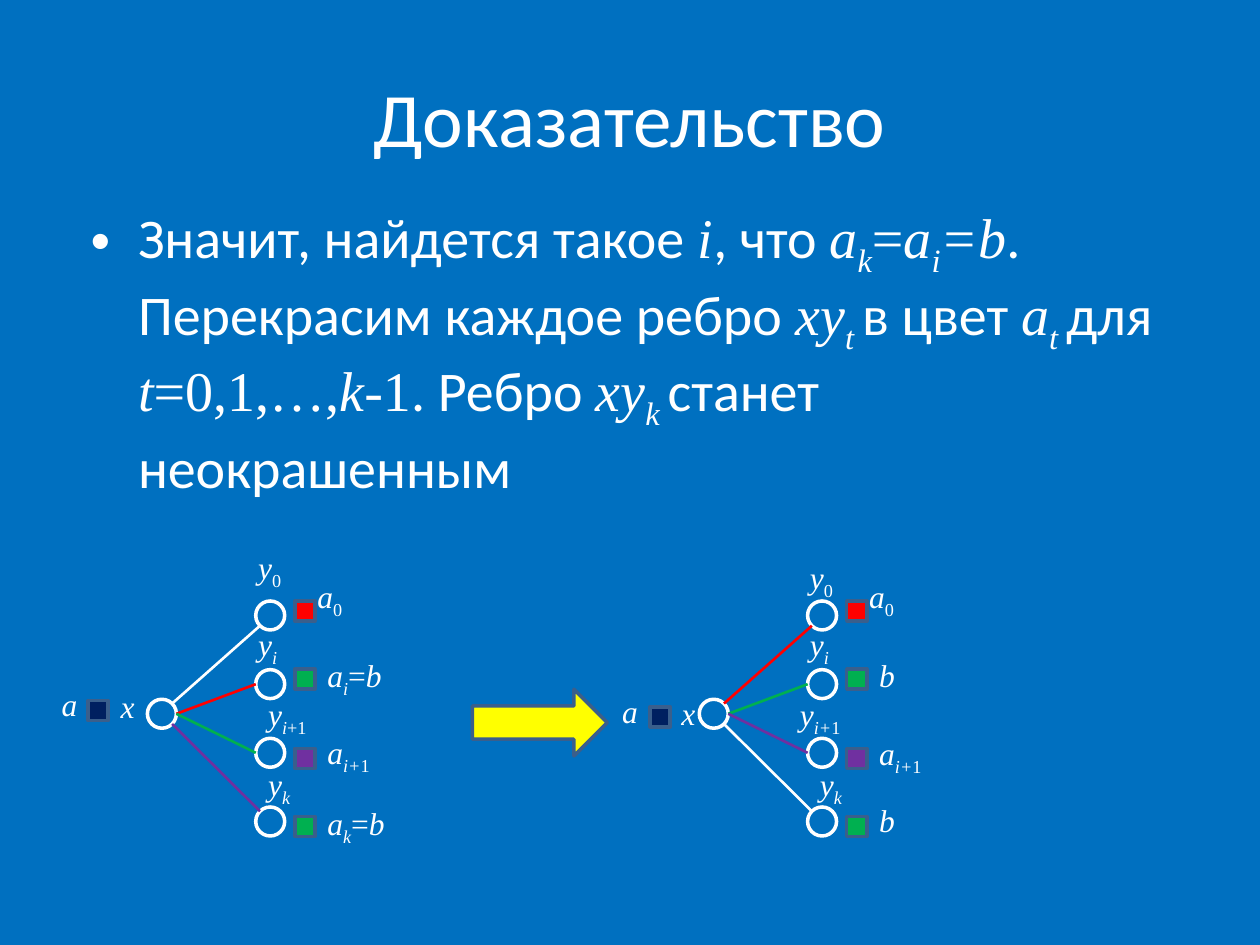
import math

import pptx
import pptx.dml.color
import pptx.enum.shapes
import pptx.enum.text
import pptx.oxml
import pptx.util

BLUE, WHITE, OUTLINE = "0070C0", "FFFFFF", "3A5F8C"
RED, GREEN, PURPLE, NAVY, YELLOW = "FF0000", "00B050", "7030A0", "002060", "FFFF00"
PLAIN, MATH = "Calibri", "Times New Roman"
SHAPE = pptx.enum.shapes.MSO_SHAPE

# Run styles: font, italic, subscript
STYLES = {
    "text": (PLAIN, False, False),
    "var": (MATH, True, False),
    "num": (MATH, False, False),
    "sub": (MATH, True, True),
    "subnum": (MATH, False, True),
}

TITLE = "Доказательство"
STATEMENT = [
    ("Значит, найдется такое ", "text"), ("i", "var"), (", что ", "text"),
    ("a", "var"), ("k", "sub"), ("=", "num"), ("a", "var"), ("i", "sub"), ("=b", "var"),
    (". Перекрасим каждое ребро ", "text"), ("xy", "var"), ("t ", "sub"),
    ("в цвет ", "text"), ("a", "var"), ("t ", "sub"), ("для ", "text"),
    ("t", "var"), ("=0,1,…,", "num"), ("k", "var"), ("-1", "num"),
    (". Ребро ", "text"), ("xy", "var"), ("k ", "sub"), ("станет неокрашенным", "text"),
]

A, B, X, Y = [(letter, "var") for letter in "abxy"]
SUB_0, SUB_I, SUB_K = ("0", "subnum"), ("i", "sub"), ("k", "sub")
NEXT = [("i+", "sub"), ("1", "subnum")]
EQUALS_B = [("=", "num"), B]

# Labels are (runs, left, top, width); lefts are measured from the graph's origin.
GRAPHS = [
    {
        "origin": 0,
        "edges": [WHITE, RED, GREEN, PURPLE],
        "hub_swatch": (0.7, 5.56),
        "labels": [
            ([A], 0.39, 5.39, 0.47), ([X], 0.86, 5.4, 0.28),
            ([Y, SUB_0], 1.95, 4.3, 0.47), ([Y, SUB_I], 1.95, 4.91, 0.47),
            ([Y, SUB_I, ("+1", "subnum")], 2.03, 5.47, 0.63),
            ([Y, SUB_K], 2.03, 6.02, 0.47),
            ([A, SUB_0], 2.42, 4.53, 0.47), ([A, SUB_I, *EQUALS_B], 2.5, 5.16, 0.7),
            ([A, *NEXT], 2.5, 5.77, 0.63), ([A, SUB_K, *EQUALS_B], 2.5, 6.33, 0.7),
        ],
    },
    {
        "origin": 4.38,
        "edges": [RED, GREEN, PURPLE, WHITE],
        "hub_swatch": (0.78, 5.61),
        "labels": [
            ([A], 0.46, 5.44, 0.47), ([X], 0.93, 5.46, 0.28),
            ([Y, SUB_0], 1.95, 4.38, 0.47), ([Y, SUB_I], 1.95, 4.91, 0.47),
            ([Y, *NEXT], 1.87, 5.47, 0.63), ([Y, SUB_K], 2.03, 6.02, 0.47),
            ([A, SUB_0], 2.42, 4.53, 0.47), ([B], 2.5, 5.16, 0.47),
            ([A, *NEXT], 2.5, 5.78, 0.63), ([B], 2.5, 6.31, 0.47),
        ],
    },
]
NODE, SWATCH = 0.23, 0.16
HUB_LEFT, HUB_TOP = 1.17, 5.55
LEAF_LEFT, LEAF_TOP, LEAF_STEP = 2.03, 4.77, 0.545
SWATCH_LEFT = 2.34
SWATCHES = [(4.77, RED), (5.31, GREEN), (5.94, PURPLE), (6.48, GREEN)]
# Angle, clockwise from the right, at which each edge leaves the hub
EDGE_ANGLES = [-45, 0, 0, 45]


def color(hex_code):
    return pptx.dml.color.RGBColor.from_string(hex_code)


def inches(*lengths):
    return [pptx.util.Inches(length) for length in lengths]


def write(paragraph, runs, size):
    paragraph.font.size = pptx.util.Pt(size)
    paragraph.font.color.rgb = color(WHITE)
    for text, style in runs:
        run = paragraph.add_run()
        run.text = text
        run.font.size = pptx.util.Pt(size)
        run.font.color.rgb = color(WHITE)
        run.font.name, run.font.italic, lowered = STYLES[style]
        if lowered:
            run.font._element.set("baseline", "-25000")


def add_figure(slide, preset, box, fill, outline):
    figure = slide.shapes.add_shape(preset, *inches(*box))
    figure.shadow.inherit = False
    figure.fill.solid()
    figure.fill.fore_color.rgb = color(fill)
    figure.line.color.rgb = color(outline)
    figure.line.width = pptx.util.Pt(2)


def add_swatch(slide, left, top, fill):
    add_figure(slide, SHAPE.RECTANGLE, (left, top, SWATCH, SWATCH), fill, OUTLINE)


def add_edge(slide, start, end, stroke):
    edge = slide.shapes.add_connector(
        pptx.enum.shapes.MSO_CONNECTOR.STRAIGHT, *inches(*start, *end))
    edge.line.color.rgb = color(stroke)
    edge.line.width = pptx.util.Pt(1.5)
    edge._element.spPr.append(pptx.oxml.parse_xml(
        '<a:effectLst xmlns:a="http://schemas.openxmlformats.org/drawingml/2006/main"/>'))


def rim(left, top, degrees):
    """Point on the rim of the node whose box starts at left, top."""
    radius, angle = NODE / 2, math.radians(degrees)
    return (left + radius * (1 + math.cos(angle)), top + radius * (1 + math.sin(angle)))


def add_label(slide, runs, left, top, width):
    label = slide.shapes.add_textbox(*inches(left, top, width, 0.4))
    label.text_frame.word_wrap = True
    write(label.text_frame.paragraphs[0], runs, 18)


def add_graph(slide, graph):
    origin = graph["origin"]
    hub = (origin + HUB_LEFT, HUB_TOP)
    leaves = [(origin + LEAF_LEFT, LEAF_TOP + row * LEAF_STEP) for row in range(4)]
    for node in [hub, *leaves]:
        add_figure(slide, SHAPE.OVAL, (*node, NODE, NODE), BLUE, WHITE)
    for leaf, angle, stroke in zip(leaves, EDGE_ANGLES, graph["edges"]):
        add_edge(slide, rim(*hub, angle), rim(*leaf, angle + 180), stroke)
    for top, fill in SWATCHES:
        add_swatch(slide, origin + SWATCH_LEFT, top, fill)
    swatch_left, swatch_top = graph["hub_swatch"]
    add_swatch(slide, origin + swatch_left, swatch_top, NAVY)
    for runs, left, top, width in graph["labels"]:
        add_label(slide, runs, origin + left, top, width)


def place(placeholder, *box):
    placeholder.left, placeholder.top, placeholder.width, placeholder.height = inches(*box)


def main():
    deck = pptx.Presentation()
    deck.slide_width, deck.slide_height = inches(10, 7.5)
    slide = deck.slides.add_slide(deck.slide_layouts[1])
    slide.background.fill.solid()
    slide.background.fill.fore_color.rgb = color(BLUE)

    title, body = slide.shapes.title, slide.placeholders[1]
    place(title, 0.5, 0.3, 9, 1.25)
    title.text_frame.vertical_anchor = pptx.enum.text.MSO_ANCHOR.MIDDLE
    write(title.text_frame.paragraphs[0], [(TITLE, "text")], 44)
    place(body, 0.62, 1.56, 9, 2.86)
    write(body.text_frame.paragraphs[0], STATEMENT, 32)

    for graph in GRAPHS:
        add_graph(slide, graph)
    add_figure(slide, SHAPE.RIGHT_ARROW, (3.75, 5.47, 1.07, 0.53), YELLOW, OUTLINE)
    deck.save("out.pptx")


if __name__ == "__main__":
    main()
